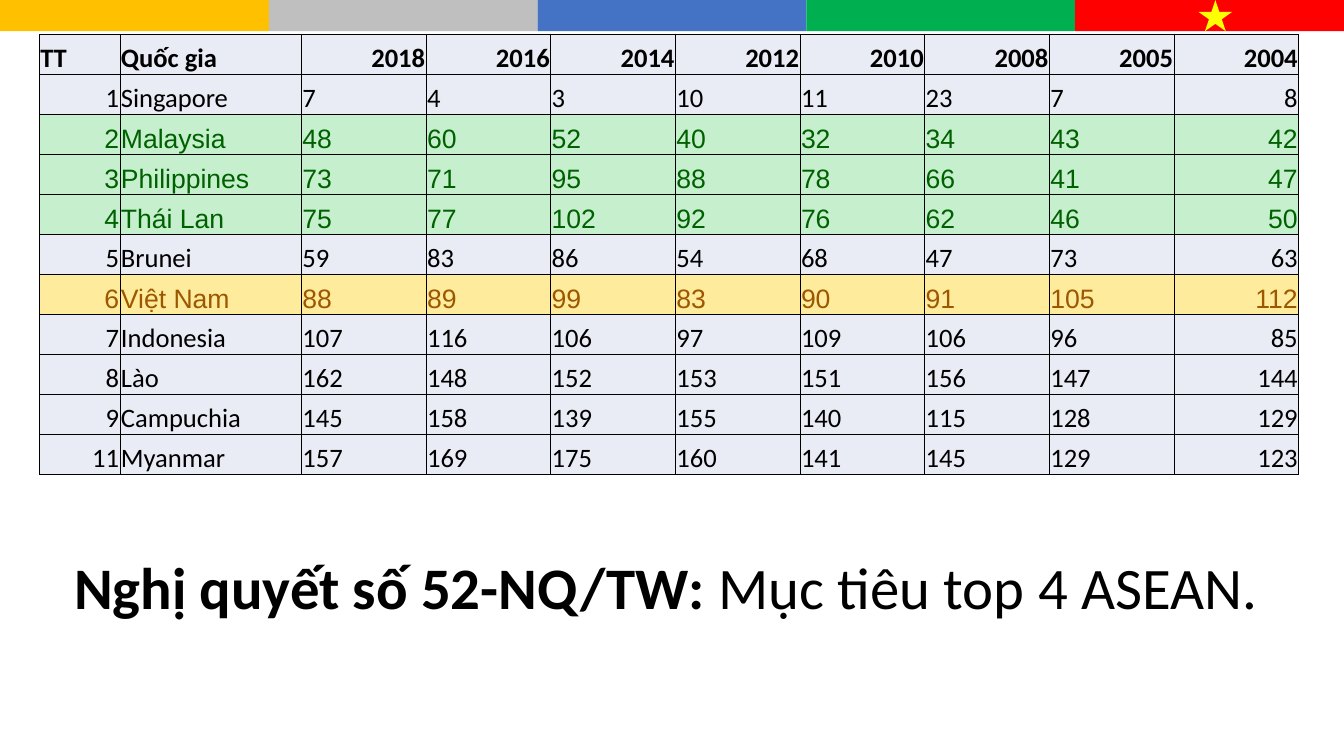
import pptx
import pptx.dml.color
import pptx.enum.shapes
import pptx.enum.text
import pptx.oxml.ns
import pptx.util
from lxml import etree

SLIDE_WIDTH = pptx.util.Inches(13.333)
SLIDE_HEIGHT = pptx.util.Inches(7.5)
BAND_HEIGHT = 0.31 / 7.5
BAND_COLOURS = ["FFC000", "BFBFBF", "4472C4", "00B050", "FF0000"]

# Ranking table: column widths in inches, row styles as (font, text, fill)
COLUMN_WIDTHS = [0.8, 1.8] + [1.237] * 8
ROW_HEIGHT = 0.397
PLAIN = ("Calibri", "000000", "E9EBF5")
TOP_FOUR = ("Arial", "006100", "C6EFCE")
VIETNAM = ("Arial", "9C5700", "FFEB9C")
ROW_STYLES = {"Malaysia": TOP_FOUR, "Philippines": TOP_FOUR,
              "Thái Lan": TOP_FOUR, "Việt Nam": VIETNAM}
RANKINGS = [
    ["TT", "Quốc gia", 2018, 2016, 2014, 2012, 2010, 2008, 2005, 2004],
    [1, "Singapore", 7, 4, 3, 10, 11, 23, 7, 8],
    [2, "Malaysia", 48, 60, 52, 40, 32, 34, 43, 42],
    [3, "Philippines", 73, 71, 95, 88, 78, 66, 41, 47],
    [4, "Thái Lan", 75, 77, 102, 92, 76, 62, 46, 50],
    [5, "Brunei", 59, 83, 86, 54, 68, 47, 73, 63],
    [6, "Việt Nam", 88, 89, 99, 83, 90, 91, 105, 112],
    [7, "Indonesia", 107, 116, 106, 97, 109, 106, 96, 85],
    [8, "Lào", 162, 148, 152, 153, 151, 156, 147, 144],
    [9, "Campuchia", 145, 158, 139, 155, 140, 115, 128, 129],
    [11, "Myanmar", 157, 169, 175, 160, 141, 145, 129, 123],
]


def colour(hex_code):
    return pptx.dml.color.RGBColor.from_string(hex_code)


def place(left, top, width, height):
    """Turn shares of the slide into a box of lengths."""
    return (int(left * SLIDE_WIDTH), int(top * SLIDE_HEIGHT),
            int(width * SLIDE_WIDTH), int(height * SLIDE_HEIGHT))


def format_run(run, font, size, text_colour, bold):
    run.font.name = font
    run.font.size = pptx.util.Pt(size)
    run.font.bold = bold
    run.font.color.rgb = colour(text_colour)


def add_band_part(slide, kind, box, fill):
    part = slide.shapes.add_shape(kind, *place(*box))
    part.shadow.inherit = False
    part.fill.solid()
    part.fill.fore_color.rgb = colour(fill)
    part.line.fill.background()


def add_flag_band(slide):
    kinds = pptx.enum.shapes.MSO_SHAPE
    share = 1 / len(BAND_COLOURS)
    for position, fill in enumerate(BAND_COLOURS):
        add_band_part(slide, kinds.RECTANGLE,
                      (position * share, 0, share, BAND_HEIGHT), fill)
    add_band_part(slide, kinds.STAR_5_POINT,
                  (11.89 / 13.333, 0, 0.025, BAND_HEIGHT), "FFFF00")


def add_borders(cell):
    properties = cell._tc.get_or_add_tcPr()
    for side in ("a:lnL", "a:lnR", "a:lnT", "a:lnB"):
        border = etree.SubElement(properties, pptx.oxml.ns.qn(side),
                                  w=str(pptx.util.Pt(0.5)))
        fill = etree.SubElement(border, pptx.oxml.ns.qn("a:solidFill"))
        etree.SubElement(fill, pptx.oxml.ns.qn("a:srgbClr"), val="000000")


def fill_cell(cell, value, style, bold, align):
    font, text_colour, fill = style
    add_borders(cell)
    cell.fill.solid()
    cell.fill.fore_color.rgb = colour(fill)
    cell.margin_left = cell.margin_right = cell.margin_top = pptx.util.Inches(0.01)
    cell.margin_bottom = 0
    cell.vertical_anchor = pptx.enum.text.MSO_ANCHOR.BOTTOM
    cell.text_frame.text = str(value)
    paragraph = cell.text_frame.paragraphs[0]
    paragraph.alignment = align
    format_run(paragraph.runs[0], font, 19, text_colour, bold)


def add_ranking_table(slide):
    box = place(0.39 / 13.333, 0.34 / 7.5, 12.5 / 13.333, 4.37 / 7.5)
    table = slide.shapes.add_table(len(RANKINGS), len(COLUMN_WIDTHS), *box).table
    table.horz_banding = False
    for column, width in zip(table.columns, COLUMN_WIDTHS):
        column.width = pptx.util.Inches(width)
    aligns = pptx.enum.text.PP_ALIGN
    for row, ranking in enumerate(RANKINGS):
        table.rows[row].height = pptx.util.Inches(ROW_HEIGHT)
        header = row == 0
        # Years sit right; below them only the rank and the last year do
        right_columns = range(2, 10) if header else (0, 9)
        style = ROW_STYLES.get(ranking[1], PLAIN)
        for column, value in enumerate(ranking):
            align = aligns.RIGHT if column in right_columns else aligns.LEFT
            fill_cell(table.cell(row, column), value, style, header, align)


def add_goal_title(slide):
    goal = slide.shapes.title
    goal.left, goal.top, goal.width, goal.height = place(
        0.58 / 13.333, 5.2 / 7.5, 12.18 / 13.333, 1.02 / 7.5)
    frame = goal.text_frame
    frame.word_wrap = True
    frame.auto_size = pptx.enum.text.MSO_AUTO_SIZE.NONE
    frame.vertical_anchor = pptx.enum.text.MSO_ANCHOR.BOTTOM
    frame.text = "Nghị quyết số 52-NQ/TW: "
    paragraph = frame.paragraphs[0]
    paragraph.alignment = pptx.enum.text.PP_ALIGN.CENTER
    paragraph.line_spacing = 0.9
    paragraph.add_run().text = "Mục tiêu top 4 ASEAN. "
    for run, bold in zip(paragraph.runs, (True, False)):
        format_run(run, "Calibri", 42, "000000", bold)


def main():
    presentation = pptx.Presentation()
    presentation.slide_width = SLIDE_WIDTH
    presentation.slide_height = SLIDE_HEIGHT
    slide = presentation.slides.add_slide(presentation.slide_layouts[5])
    add_flag_band(slide)
    add_goal_title(slide)
    add_ranking_table(slide)
    presentation.save("out.pptx")


if __name__ == "__main__":
    main()
